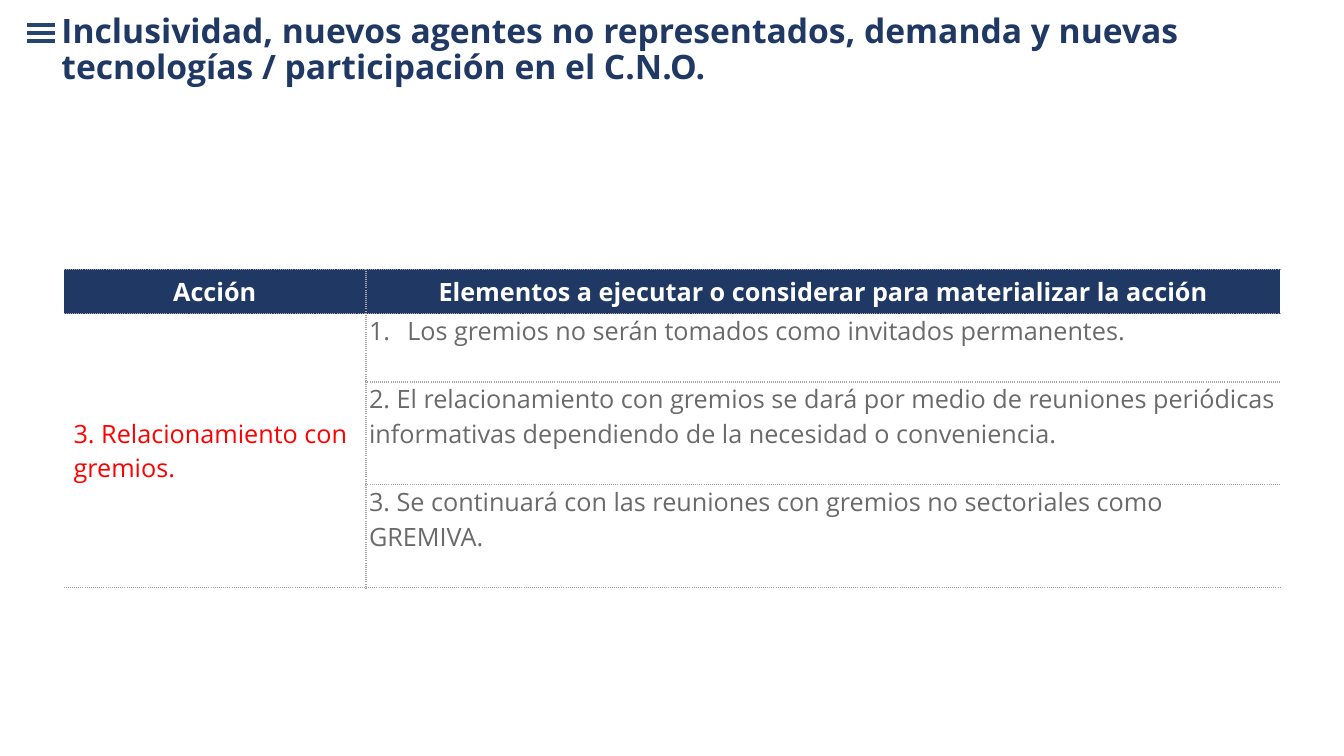
from dataclasses import dataclass

from lxml import etree
from pptx import Presentation
from pptx.dml.color import RGBColor
from pptx.enum import shapes, text
from pptx.oxml import ns
from pptx.util import Inches, Pt


@dataclass(frozen=True)
class Theme:
    font: str = "Open Sans"
    navy: str = "203864"
    icon: str = "274470"
    white: str = "FFFFFF"
    red: str = "FF0000"
    gray: str = "6A6A6A"
    border: str = "A6A6A6"
    title_size: int = 24
    body_size: int = 18


theme = Theme()


def style(para, size, color, bold=False):
    para.font.name = theme.font
    para.font.size = Pt(size)
    para.font.bold = bold
    para.font.color.rgb = RGBColor.from_string(color)


def set_borders(cell, dotted_sides):
    properties = cell._tc.get_or_add_tcPr()
    for side in "LRTB":
        line = etree.SubElement(properties, ns.qn(f"a:ln{side}"), w=str(Pt(1)))
        if side in dotted_sides:
            fill = etree.SubElement(line, ns.qn("a:solidFill"))
            etree.SubElement(fill, ns.qn("a:srgbClr"), val=theme.border)
            etree.SubElement(line, ns.qn("a:prstDash"), val="sysDot")
        else:
            etree.SubElement(line, ns.qn("a:noFill"))


deck = Presentation()
deck.slide_width, deck.slide_height = Inches(13.33), Inches(7.5)
page = deck.slides.add_slide(deck.slide_layouts[5])

for index in range(3):
    y = Inches(0.25 + 0.08 * index)
    bar = page.shapes.add_connector(
        shapes.MSO_CONNECTOR.STRAIGHT, Inches(0.27), y, Inches(0.55), y)
    bar.line.color.rgb = RGBColor.from_string(theme.icon)
    bar.line.width = Pt(3)
    etree.SubElement(bar._element.spPr, ns.qn("a:effectLst"))

title = page.shapes.title
title.left, title.top = Inches(0.51), Inches(0.06)
title.width, title.height = Inches(12.21), Inches(0.89)
frame = title.text_frame
frame.text = ("Inclusividad, nuevos agentes no representados, demanda y nuevas "
              "tecnologías / participación en el C.N.O.")
frame.auto_size = text.MSO_AUTO_SIZE.NONE
frame.word_wrap = True
frame.vertical_anchor = text.MSO_ANCHOR.MIDDLE
heading = frame.paragraphs[0]
heading.alignment = text.PP_ALIGN.LEFT
heading.line_spacing = 0.9
style(heading, theme.title_size, theme.navy, bold=True)

rows = [
    ("Acción", "Elementos a ejecutar o considerar para materializar la acción"),
    ("3. Relacionamiento con gremios.",
     "Los gremios no serán tomados como invitados permanentes."),
    ("", "2. El relacionamiento con gremios se dará por medio de reuniones "
         "periódicas informativas dependiendo de la necesidad o conveniencia."),
    ("", "3. Se continuará con las reuniones con gremios no sectoriales como GREMIVA."),
]
column_widths = [3, 9.07]
row_heights = [0.44, 0.68, 1.02, 1.02]
table = page.shapes.add_table(
    len(rows), len(column_widths), Inches(0.63), Inches(2.67),
    Inches(sum(column_widths)), Inches(sum(row_heights))).table
table.horz_banding = False
for column, width in zip(table.columns, column_widths):
    column.width = Inches(width)
for row, height in zip(table.rows, row_heights):
    row.height = Inches(height)

for row_index, row in enumerate(rows):
    for column_index, words in enumerate(row):
        cell = table.cell(row_index, column_index)
        is_header = row_index == 0
        is_action = column_index == 0
        set_borders(cell, "RTB" if is_action else "LTB")
        para = cell.text_frame.paragraphs[0]
        para.text = words
        if is_header:
            cell.fill.solid()
            cell.fill.fore_color.rgb = RGBColor.from_string(theme.navy)
            para.alignment = text.PP_ALIGN.CENTER
            style(para, theme.body_size, theme.white, bold=True)
            continue
        cell.fill.background()
        if is_action:
            cell.vertical_anchor = text.MSO_ANCHOR.MIDDLE
        else:
            cell.vertical_anchor = text.MSO_ANCHOR.TOP
            cell.margin_left = cell.margin_right = Inches(0.03)
            cell.margin_top = cell.margin_bottom = 0
        if row_index == 1 and not is_action:
            properties = para._p.get_or_add_pPr()
            properties.set("marL", str(Inches(0.38)))
            properties.set("indent", str(-Inches(0.38)))
            etree.SubElement(properties, ns.qn("a:buAutoNum"), type="arabicPeriod")
        style(para, theme.body_size, theme.red if is_action else theme.gray)

table.cell(1, 0).merge(table.cell(3, 0))

deck.save("out.pptx")
